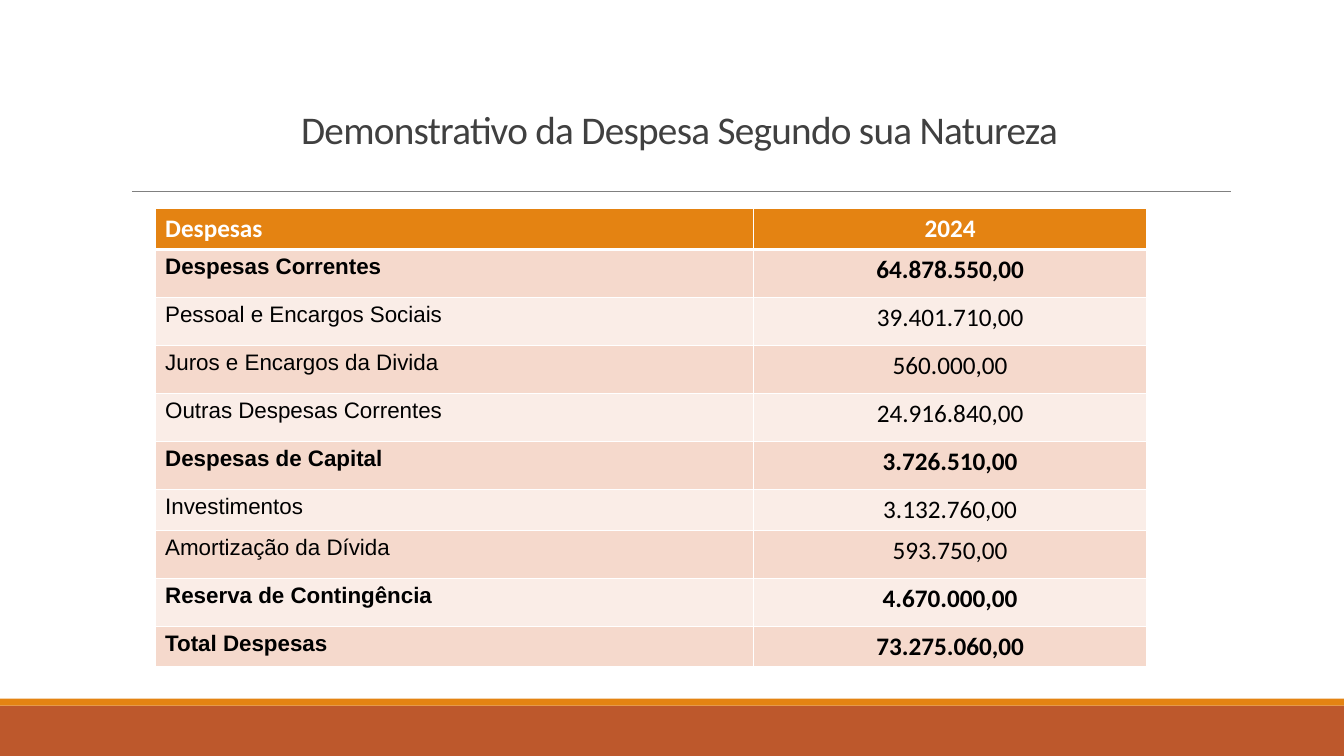
from lxml.etree import SubElement
from pptx import Presentation
from pptx.dml.color import RGBColor
from pptx.enum.shapes import MSO_CONNECTOR, MSO_SHAPE
from pptx.enum.text import MSO_ANCHOR, PP_ALIGN
from pptx.oxml.ns import qn
from pptx.util import Pt

WHITE = RGBColor(0xFF, 0xFF, 0xFF)
BLACK = RGBColor(0x00, 0x00, 0x00)
DARK = RGBColor(0x40, 0x40, 0x40)
GRAY = RGBColor(0x80, 0x80, 0x80)
ORANGE = RGBColor(0xE4, 0x83, 0x12)
RUST = RGBColor(0xBD, 0x58, 0x2C)
BANDS = [RGBColor(0xF5, 0xD9, 0xCC), RGBColor(0xFA, 0xED, 0xE7)]

WIDTH, HEIGHT = 960, 540
SHORT, TALL = 29, 34.3

# Label, value, bold, row height
ROWS = [
    ("Despesas", "2024", True, SHORT),
    ("Despesas Correntes", "64.878.550,00", True, TALL),
    ("Pessoal e Encargos Sociais", "39.401.710,00", False, TALL),
    ("Juros e Encargos da Divida", "560.000,00", False, TALL),
    ("Outras Despesas Correntes", "24.916.840,00", False, TALL),
    ("Despesas de Capital", "3.726.510,00", True, TALL),
    ("Investimentos", "3.132.760,00", False, SHORT),
    ("Amortização da Dívida", "593.750,00", False, TALL),
    ("Reserva de Contingência", "4.670.000,00", True, TALL),
    ("Total Despesas", "73.275.060,00", True, SHORT),
]


def style(para, font, size, color, bold=False):
    for run in para.runs:
        run.font.name = font
        run.font.size = Pt(size)
        run.font.bold = bold
        run.font.color.rgb = color


def add_bar(slide, left, top, width, height, color):
    bar = slide.shapes.add_shape(
        MSO_SHAPE.RECTANGLE, Pt(left), Pt(top), Pt(width), Pt(height))
    bar.shadow.inherit = False
    bar.fill.solid()
    bar.fill.fore_color.rgb = color
    bar.line.fill.background()


def add_footer(slide, left, top, width, height):
    strip = 5
    add_bar(slide, left, top + strip, width, height - strip, RUST)
    add_bar(slide, left, top, width, strip, ORANGE)


def add_title(slide, left, top, width, height):
    # Rule below the heading
    level = Pt(top + height + 24.5)
    rule = slide.shapes.add_connector(
        MSO_CONNECTOR.STRAIGHT, Pt(left + 5), level, Pt(left + width - 2), level)
    rule.line.color.rgb = GRAY
    rule.line.width = Pt(0.5)
    SubElement(rule._element.spPr, qn("a:effectLst"))

    # Heading text
    box = slide.shapes.add_textbox(Pt(left), Pt(top), Pt(width), Pt(height))
    frame = box.text_frame
    frame.word_wrap = True
    frame.vertical_anchor = MSO_ANCHOR.BOTTOM
    frame.text = "Demonstrativo da Despesa Segundo sua Natureza"
    para = frame.paragraphs[0]
    para.alignment = PP_ALIGN.CENTER
    para.line_spacing = 0.85
    style(para, "Calibri", 28, DARK)
    para.runs[0]._r.get_or_add_rPr().set("spc", "-50")


def add_edges(cell, widths):
    props = cell._tc.get_or_add_tcPr()
    for side, width in widths.items():
        edge = SubElement(props, qn(f"a:ln{side}"), w=str(Pt(width)))
        fill = SubElement(edge, qn("a:solidFill"))
        SubElement(fill, qn("a:srgbClr"), val=str(WHITE))


def add_costs(slide, left, top, width, height):
    table = slide.shapes.add_table(
        len(ROWS), 2, Pt(left), Pt(top), Pt(width), Pt(height)).table
    table.horz_banding = False
    first = 427.6
    table.columns[0].width = Pt(first)
    table.columns[1].width = Pt(width - first)

    for row, (label, value, bold, tall) in enumerate(ROWS):
        table.rows[row].height = Pt(tall)
        head = row == 0
        for col, text in enumerate((label, value)):
            cell = table.cell(row, col)
            add_edges(cell, {"L": 1, "R": 1, "T": 3 if row == 1 else 1,
                             "B": 3 if head else 1})
            cell.fill.solid()
            cell.fill.fore_color.rgb = ORANGE if head else BANDS[(row - 1) % 2]
            cell.text_frame.text = text
            para = cell.text_frame.paragraphs[0]
            para.alignment = PP_ALIGN.CENTER if col else PP_ALIGN.LEFT
            if head or col:
                style(para, "Calibri", 18, WHITE if head else BLACK, bold)
            else:
                style(para, "Arial", 16, BLACK, bold)


def main():
    deck = Presentation()
    deck.slide_width, deck.slide_height = Pt(WIDTH), Pt(HEIGHT)
    slide = deck.slides.add_slide(deck.slide_layouts[6])
    add_footer(slide, 0, 499, WIDTH, HEIGHT - 499)
    add_title(slide, 89.3, 45.3, 792, 67)
    add_costs(slide, 110.8, 149.2, 708.2, sum(row[3] for row in ROWS))
    deck.save("out.pptx")


if __name__ == "__main__":
    main()
